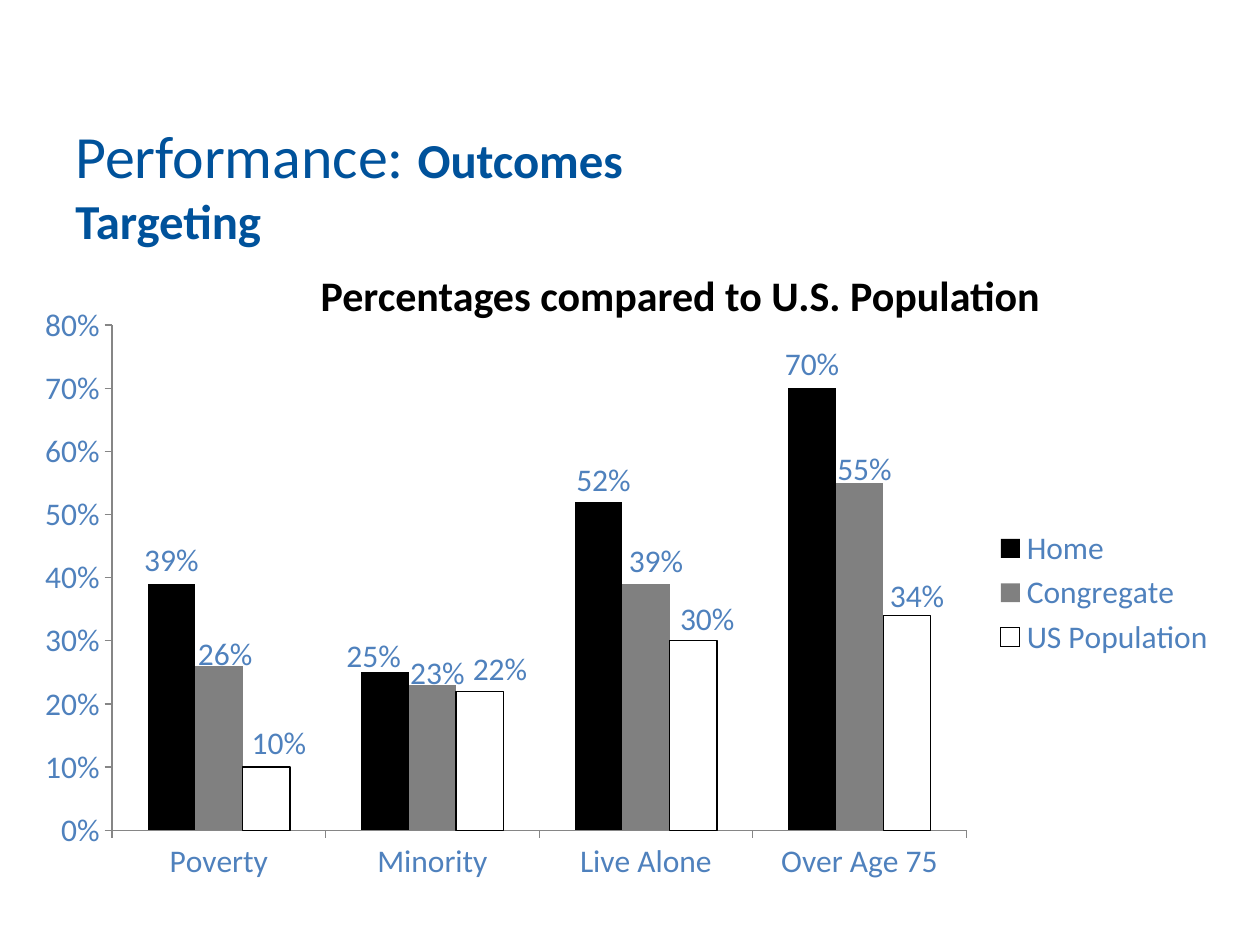
from lxml.etree import SubElement
from pptx import Presentation
from pptx.chart.data import CategoryChartData
from pptx.dml.color import RGBColor
from pptx.enum.chart import XL_CHART_TYPE, XL_LABEL_POSITION, XL_LEGEND_POSITION, XL_TICK_MARK
from pptx.enum.text import MSO_ANCHOR, PP_ALIGN
from pptx.oxml.ns import qn
from pptx.util import Inches, Pt

TITLE = [[("Performance: ", 34.2, False), ("Outcomes", 27.9, True)],
         [("Targeting", 27.9, True)]]
SUBTITLE = [[("Percentages compared to U.S. Population", 24, True)]]
CATEGORIES = ["Poverty", "Minority", "Live Alone", "Over Age 75"]
SERIES = [
    {"name": "Home", "values": [0.39, 0.25, 0.52, 0.7], "fill": "000000",
     "shifts": {1: (-0.09, 0.06), 2: (0.04, 0.02)}},
    {"name": "Congregate", "values": [0.26, 0.23, 0.39, 0.55], "fill": "808080",
     "shifts": {0: (0.05, 0.1), 1: (0.04, 0.1), 2: (0.08, 0.01), 3: (0.04, 0.08)}},
    {"name": "US Population", "values": [0.1, 0.22, 0.3, 0.34], "fill": "FFFFFF",
     "line": "000000",
     "shifts": {0: (0.1, 0), 1: (0.16, 0.02), 2: (0.11, 0.02), 3: (0.08, 0.04)}},
]
CHART_BOX = (0.17, 2.33, 9.58, 4.75)
PLOT_BOX = (0.89, 2.58, 6.78, 4.01)
THEME = {"font": "Calibri", "title": "00529B", "subtitle": "000000",
         "chart": "4F81BD", "axis": "868686", "chart_size": 18}


def rgb(name):
    return RGBColor.from_string(THEME.get(name, name))


def add_text(s, lines, box, color, anchor, align=PP_ALIGN.LEFT):
    tf = s.shapes.add_textbox(*map(Inches, box)).text_frame
    tf.word_wrap = True
    tf.vertical_anchor = anchor
    p = tf.paragraphs[0]
    p.alignment = align
    for i, runs in enumerate(lines):
        if i:
            p.add_line_break()
        for text, size, bold in runs:
            r = p.add_run()
            r.text = text
            r.font.name, r.font.size, r.font.bold = THEME["font"], Pt(size), bold
            r.font.color.rgb = rgb(color)


def fill_layout(layout, **values):
    manual = SubElement(layout, qn("c:manualLayout"))
    for tag, value in values.items():
        SubElement(manual, qn(f"c:{tag}")).set("val", str(value))


def style_axis(axis):
    axis.has_major_gridlines = False
    axis.major_tick_mark = XL_TICK_MARK.OUTSIDE
    axis.minor_tick_mark = XL_TICK_MARK.NONE
    axis.format.line.color.rgb = rgb("axis")
    axis.format.line.width = Pt(0.75)


def style_series(series, item):
    series.format.fill.solid()
    series.format.fill.fore_color.rgb = rgb(item["fill"])
    series.invert_if_negative = False
    if "line" in item:
        series.format.line.color.rgb = rgb(item["line"])
        series.format.line.width = Pt(0.75)
    labels = series.data_labels
    labels.show_value = True
    labels.number_format, labels.number_format_is_linked = "0%", False
    labels.position = XL_LABEL_POSITION.OUTSIDE_END
    for i, (dx, dy) in item["shifts"].items():
        series.points[i].data_label.position = XL_LABEL_POSITION.OUTSIDE_END
    for label in labels._element.findall(qn("c:dLbl")):
        idx = label.find(qn("c:idx"))
        dx, dy = item["shifts"][int(idx.get("val"))]
        layout = SubElement(label, qn("c:layout"))
        idx.addnext(layout)
        fill_layout(layout, x=dx / CHART_BOX[2], y=dy / CHART_BOX[3])


def add_bars(s):
    data = CategoryChartData(number_format="0%")
    data.categories = CATEGORIES
    for item in SERIES:
        data.add_series(item["name"], item["values"])
    chart = s.shapes.add_chart(XL_CHART_TYPE.COLUMN_CLUSTERED,
                               *map(Inches, CHART_BOX), data).chart
    chart.has_title = False
    chart.font.name, chart.font.size = THEME["font"], Pt(THEME["chart_size"])
    chart.font.color.rgb = rgb("chart")
    chart.has_legend = True
    chart.legend.position = XL_LEGEND_POSITION.RIGHT
    chart.legend.include_in_layout = False
    for axis in (chart.category_axis, chart.value_axis):
        style_axis(axis)
    axis = chart.value_axis
    axis.minimum_scale, axis.maximum_scale, axis.major_unit = 0, 0.8, 0.1
    axis.tick_labels.number_format = "0%"
    axis.tick_labels.number_format_is_linked = False
    plot = chart.plots[0]
    plot.gap_width, plot.overlap, plot.vary_by_categories = 150, 0, False
    for series, item in zip(plot.series, SERIES):
        style_series(series, item)
    area = chart._chartSpace.chart.plotArea
    layout = area.find(qn("c:layout"))
    if layout is None:
        layout = SubElement(area, qn("c:layout"))
        area.insert(0, layout)
    left, top, width, height = CHART_BOX
    x, y, w, h = PLOT_BOX
    fill_layout(layout, layoutTarget="inner", xMode="edge", yMode="edge",
                x=(x - left) / width, y=(y - top) / height, w=w / width, h=h / height)


def main():
    prs = Presentation()
    prs.slide_width, prs.slide_height = Inches(10), Inches(7.5)
    s = prs.slides.add_slide(prs.slide_layouts[6])
    add_text(s, TITLE, (0.5, 0.96, 9, 1), "title", MSO_ANCHOR.MIDDLE)
    add_text(s, SUBTITLE, (2.15, 1.89, 6.5, 0.7), "subtitle",
             MSO_ANCHOR.BOTTOM, PP_ALIGN.CENTER)
    add_bars(s)
    prs.save("out.pptx")


if __name__ == "__main__":
    main()
